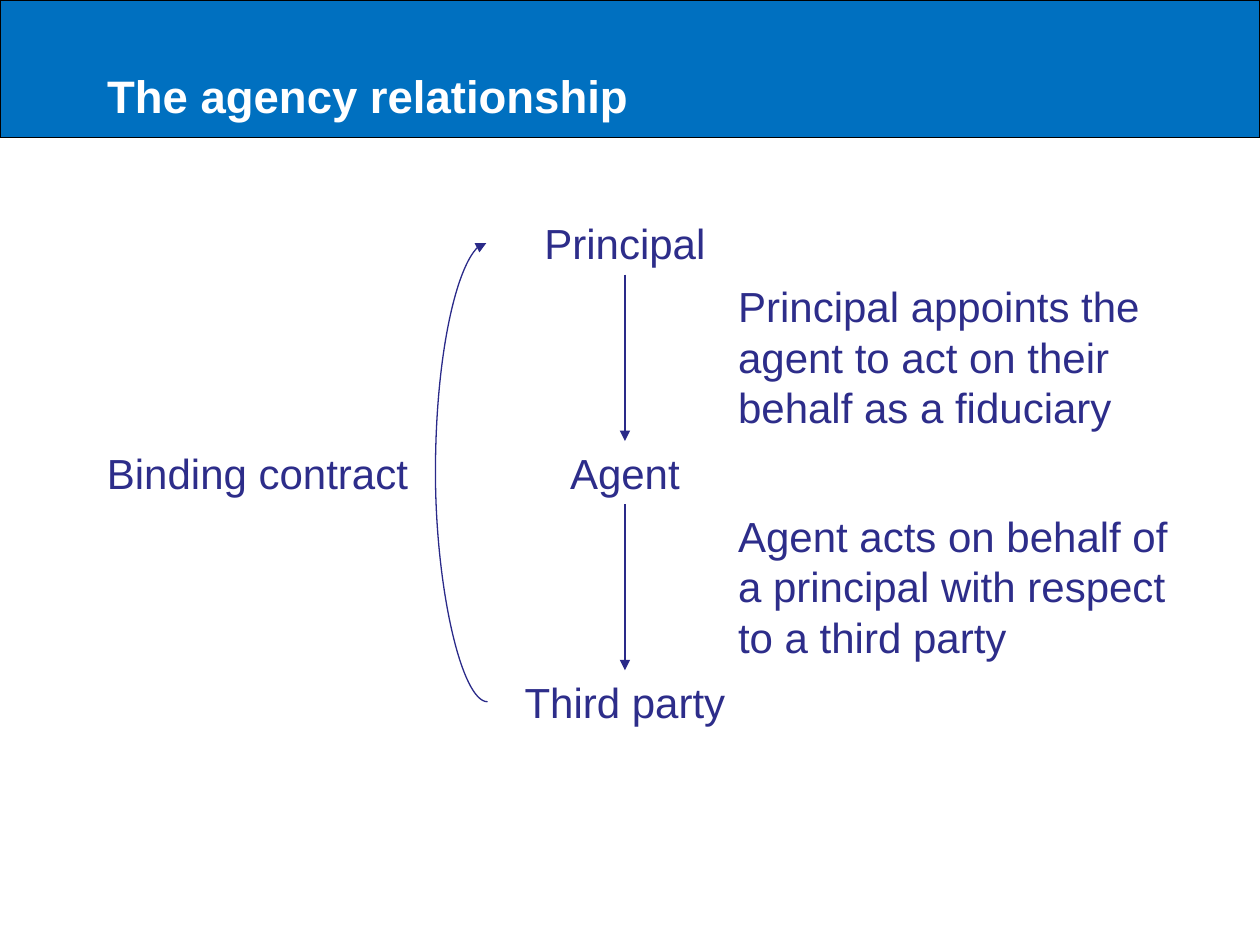
from dataclasses import dataclass

from lxml.etree import SubElement
from pptx import Presentation
from pptx.dml.color import RGBColor
from pptx.enum.shapes import MSO_CONNECTOR, MSO_SHAPE
from pptx.enum.text import MSO_ANCHOR, MSO_AUTO_SIZE, PP_ALIGN
from pptx.oxml.ns import qn
from pptx.util import Inches, Pt

# Content
TITLE = "The agency relationship"
PARTIES = ["Principal", "Agent", "Third party"]
DUTIES = [
    "Principal appoints the agent to act on their behalf as a fiduciary",
    "Agent acts on behalf of a principal with respect to a third party",
]
RESULT = "Binding contract"


@dataclass(frozen=True)
class Theme:
    font: str = "Arial"
    title_size: int = 26
    body_size: int = 24
    banner: RGBColor = RGBColor(0x00, 0x70, 0xC0)
    banner_line: RGBColor = RGBColor(0x00, 0x00, 0x00)
    title: RGBColor = RGBColor(0xFF, 0xFF, 0xFF)
    text: RGBColor = RGBColor(0x2D, 0x2D, 0x8A)
    arrow: RGBColor = RGBColor(0x2A, 0x2A, 0x89)
    line_width: float = 0.75


THEME = Theme()

# Layout in inches
MARGIN = 0.75
PARTY_LEFT, PARTY_TOP, PARTY_WIDTH = 3.86, 1.68, 2.2
ROW_HEIGHT, ROW_STEP = 0.5, 1.82
DUTY_LEFT, DUTY_WIDTH, DUTY_HEIGHT = 5.76, 3.7, 1.31
CURVE_WIDTH, CURVE_BULGE = 0.01, 0.42


def write(shape, text, size=THEME.body_size, color=THEME.text, bold=False,
          align=PP_ALIGN.LEFT, anchor=MSO_ANCHOR.TOP, fit=MSO_AUTO_SIZE.SHAPE_TO_FIT_TEXT):
    frame = shape.text_frame
    frame.word_wrap = True
    frame.auto_size = fit
    frame.vertical_anchor = anchor
    para = frame.paragraphs[0]
    para.alignment = align
    span = para.add_run()
    span.text = text
    span.font.name = THEME.font
    span.font.size = Pt(size)
    span.font.bold = bold
    span.font.color.rgb = color


def add_text(page, text, left, top, width, height, **style):
    box = page.shapes.add_textbox(*map(Inches, (left, top, width, height)))
    write(box, text, **style)
    return box


def add_arrow(page, kind, *ends):
    arrow = page.shapes.add_connector(kind, *map(Inches, ends))
    arrow.line.color.rgb = THEME.arrow
    arrow.line.width = Pt(THEME.line_width)
    SubElement(arrow.line._get_or_add_ln(), qn("a:tailEnd"), type="triangle")
    SubElement(arrow._element.spPr, qn("a:effectLst"))
    return arrow


deck = Presentation()
deck.slide_width, deck.slide_height = Inches(10), Inches(7.5)
page = deck.slides.add_slide(deck.slide_layouts[5])

# Banner, placed behind the title
banner = page.shapes.add_shape(MSO_SHAPE.RECTANGLE, 0, 0, deck.slide_width, Inches(1.09))
banner.shadow.inherit = False
banner.fill.solid()
banner.fill.fore_color.rgb = THEME.banner
banner.line.color.rgb = THEME.banner_line
banner.line.width = Pt(THEME.line_width)
title = page.shapes.title
title._element.addprevious(banner._element)

# Title
title.left, title.top, title.width, title.height = map(Inches, (MARGIN, 0.47, 8.42, 0.58))
write(title, TITLE, size=THEME.title_size, color=THEME.title, bold=True,
      anchor=MSO_ANCHOR.MIDDLE, fit=MSO_AUTO_SIZE.NONE)

# Parties, one under another
row_tops = [PARTY_TOP + row * ROW_STEP for row in range(len(PARTIES))]
parties = [
    add_text(page, name, PARTY_LEFT, top, PARTY_WIDTH, ROW_HEIGHT, align=PP_ALIGN.CENTER)
    for name, top in zip(PARTIES, row_tops)
]

# Arrows between parties, each with its duty alongside
center = PARTY_LEFT + PARTY_WIDTH / 2
for duty, top, upper, lower in zip(DUTIES, row_tops, parties, parties[1:]):
    arrow = add_arrow(page, MSO_CONNECTOR.STRAIGHT,
                      center, top + ROW_HEIGHT, center, top + ROW_STEP)
    arrow.begin_connect(upper, 2)
    arrow.end_connect(lower, 0)
    add_text(page, duty, DUTY_LEFT, top + ROW_HEIGHT, DUTY_WIDTH, DUTY_HEIGHT)

# Curve from the third party back to the principal
curve = add_arrow(page, MSO_CONNECTOR.CURVE,
                  PARTY_LEFT + CURVE_WIDTH, row_tops[-1] + ROW_HEIGHT / 2,
                  PARTY_LEFT, row_tops[0] + ROW_HEIGHT / 2)
bulge = round(CURVE_BULGE / CURVE_WIDTH * 100000)
guides = curve._element.spPr.find(qn("a:prstGeom")).get_or_add_avLst()
SubElement(guides, qn("a:gd"), name="adj1", fmla=f"val {bulge}")
add_text(page, RESULT, MARGIN, row_tops[1], 2.68, ROW_HEIGHT)

deck.save("out.pptx")
